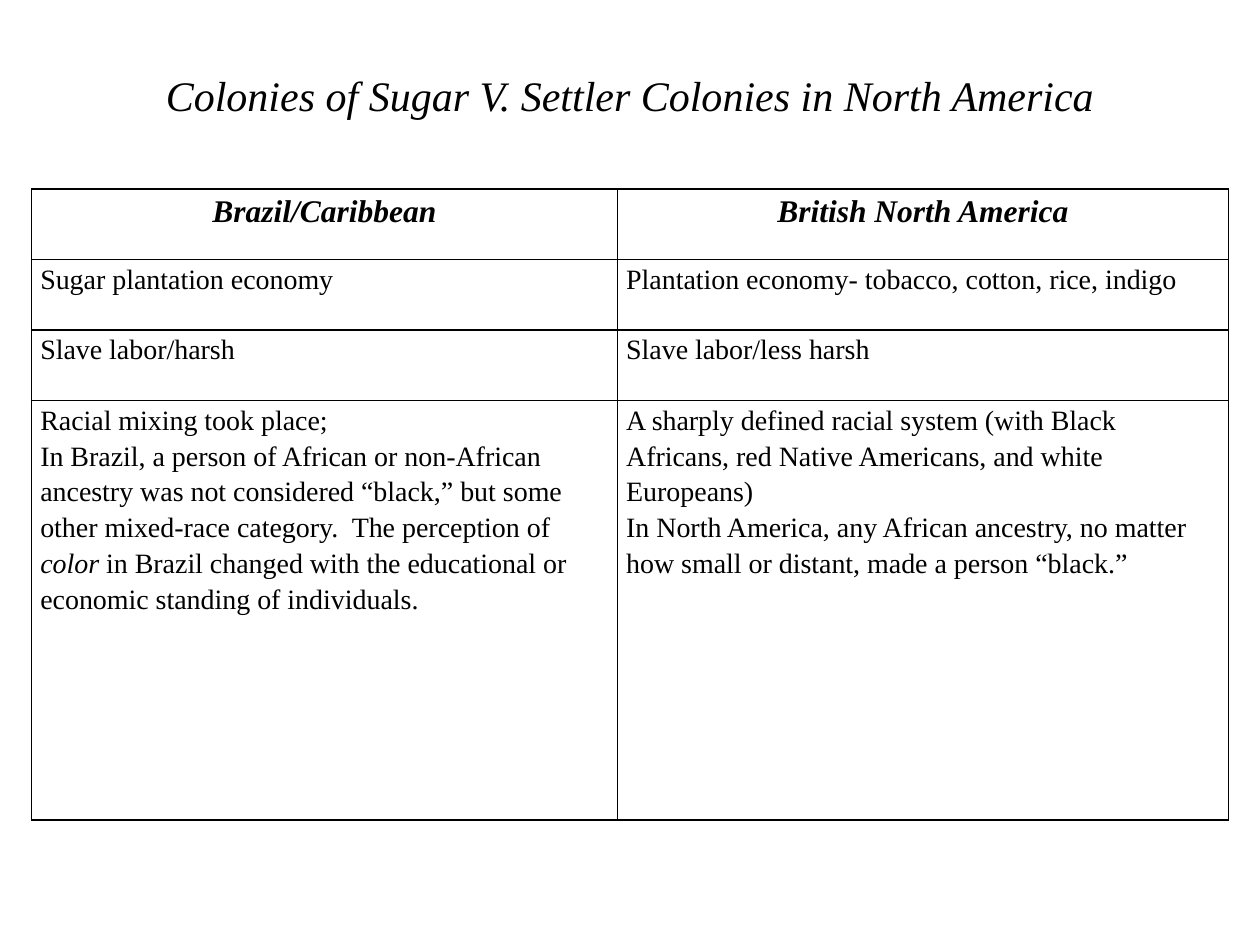
from lxml import etree
from pptx import Presentation
from pptx.dml.color import RGBColor
from pptx.enum.text import MSO_ANCHOR, PP_ALIGN
from pptx.oxml.ns import qn
from pptx.util import Inches, Pt

CENTER, LEFT = PP_ALIGN.CENTER, PP_ALIGN.LEFT
MIDDLE = MSO_ANCHOR.MIDDLE
INK = "000000"

TITLE = "Colonies of Sugar V. Settler Colonies in North America"
ROWS = [
    (["Brazil/Caribbean"], ["British North America"]),
    (["Sugar plantation economy"],
     ["Plantation economy- tobacco, cotton, rice, indigo"]),
    (["Slave labor/harsh"], ["Slave labor/less harsh"]),
    (["Racial mixing took place;",
      ("In Brazil, a person of African or non-African ancestry was not "
       "considered “black,” but some other mixed-race category.  "
       "The perception of *color* in Brazil changed with the educational "
       "or economic standing of individuals.")],
     ["A sharply defined racial system (with Black Africans, red Native "
      "Americans, and white Europeans)",
      "In North America, any African ancestry, no matter how small or "
      "distant, made a person “black.”"]),
]
COLUMN_WIDTHS = [4.65, 4.85]
ROW_HEIGHTS = [0.56, 0.56, 0.56, 3.33]
MARGINS = {"margin_left": Inches(0.07), "margin_right": Inches(0.07),
           "margin_top": 0, "margin_bottom": 0}
TITLE_FONT = {"size": Pt(24), "italic": True}
HEADER_FONT = {"size": Pt(18), "bold": True, "italic": True}
BODY_FONT = {"size": Pt(16), "bold": False, "italic": False}


def color(value):
    return RGBColor.from_string(value)


def set_all(target, values):
    for name, value in values.items():
        setattr(target, name, value)


def write_paragraph(para, text, font, align):
    para.alignment = align
    for index, part in enumerate(text.split("*")):
        span = para.add_run()
        span.text = part
        set_all(span.font, {"name": "Times New Roman", **font})
        if index % 2:
            span.font.italic = True
        span.font.color.rgb = color(INK)


def add_borders(cell):
    properties = cell._tc.get_or_add_tcPr()
    for position, side in enumerate(("a:lnL", "a:lnR", "a:lnT", "a:lnB")):
        line = etree.Element(qn(side), w=str(Pt(1)))
        fill = etree.SubElement(line, qn("a:solidFill"))
        etree.SubElement(fill, qn("a:srgbClr"), val=INK)
        properties.insert(position, line)


def fill_cell(cell, texts, font, align):
    set_all(cell, MARGINS)
    cell.fill.background()
    add_borders(cell)
    frame = cell.text_frame
    for index, text in enumerate(texts):
        para = frame.add_paragraph() if index else frame.paragraphs[0]
        para.line_spacing = 1.15
        write_paragraph(para, text, font, align)


deck = Presentation()
deck.slide_width, deck.slide_height = Inches(10), Inches(7.5)
page = deck.slides.add_slide(deck.slide_layouts[6])

box = page.shapes.add_textbox(Inches(0.71), 0, Inches(8.58), Inches(1.5))
set_all(box.text_frame, {"word_wrap": True, "vertical_anchor": MIDDLE})
write_paragraph(box.text_frame.paragraphs[0], TITLE, TITLE_FONT, CENTER)

table = page.shapes.add_table(
    len(ROWS), len(COLUMN_WIDTHS), Inches(0.25), Inches(1.5),
    Inches(sum(COLUMN_WIDTHS)), Inches(sum(ROW_HEIGHTS))).table
set_all(table, {"first_row": False, "horz_banding": False})
for column, width in zip(table.columns, COLUMN_WIDTHS):
    column.width = Inches(width)
for row, height, contents in zip(table.rows, ROW_HEIGHTS, ROWS):
    row.height = Inches(height)
    is_header = contents is ROWS[0]
    font, align = (HEADER_FONT, CENTER) if is_header else (BODY_FONT, LEFT)
    for cell, texts in zip(row.cells, contents):
        fill_cell(cell, texts, font, align)

deck.save("out.pptx")
